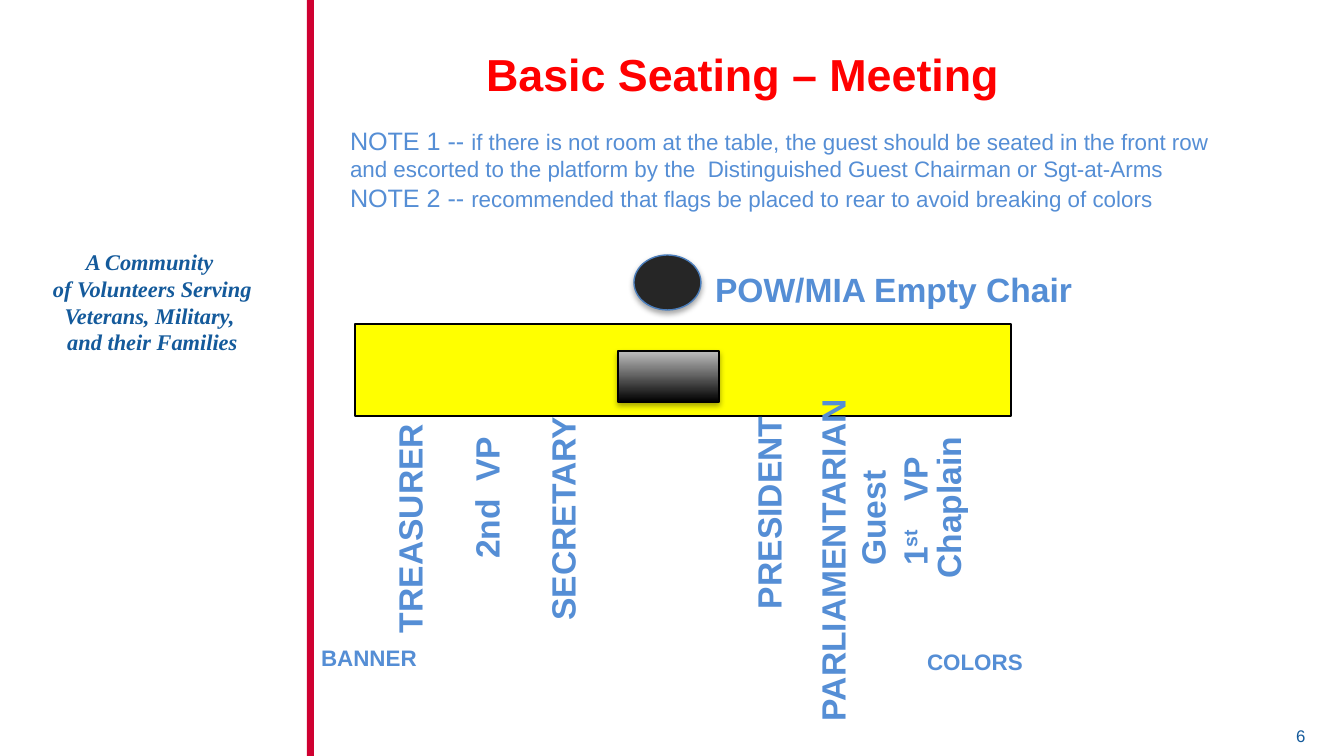
from dataclasses import dataclass
from lxml import etree
from pptx import Presentation
from pptx.dml.color import RGBColor as RGB
from pptx.enum.shapes import MSO_SHAPE as Shape
from pptx.enum.text import MSO_ANCHOR as Anchor, PP_ALIGN as Align
from pptx.oxml.ns import qn
from pptx.util import Pt

PX = 914400 / 134.4


def px(n):
    return round(n * PX)


@dataclass(frozen=True)
class Theme:
    sans: str = "Arial"
    serif: str = "Times New Roman"
    white: str = "FFFFFF"
    black: str = "000000"
    red: str = "FF0000"
    bar: str = "CF0031"
    navy: str = "145A9B"
    blue: str = "558ED5"
    yellow: str = "FFFF00"
    silver: str = "BDBDBD"
    coal: str = "262626"
    rim: str = "4B7EBC"
    head: float = 24
    label: float = 18
    lead: float = 13.5
    body: float = 12
    tiny: float = 9


class Deck:
    def __init__(self, theme):
        self.theme = theme
        self.prs = Presentation()
        self.prs.slide_width, self.prs.slide_height = px(1344), px(756)
        self.slide = self.prs.slides.add_slide(self.prs.slide_layouts[5])

    def font(self, par, size, color, bold=False, italic=False, face=None):
        font = par.font
        font.name = face or self.theme.sans
        font.size = Pt(size)
        font.bold, font.italic = bold, italic
        font.color.rgb = RGB.from_string(color)

    def frame(self, shape, wrap, top=7):
        frame = shape.text_frame
        frame.word_wrap = wrap
        frame.vertical_anchor = Anchor.TOP
        frame.margin_left = frame.margin_right = px(13)
        frame.margin_top, frame.margin_bottom = px(top), px(7)
        return frame

    def title(self, text, x, y, w, h):
        shape = self.slide.shapes.title
        shape.left, shape.top, shape.width, shape.height = map(px, (x, y, w, h))
        par = self.frame(shape, True, 12).paragraphs[0]
        par.text = text
        par.alignment = Align.LEFT
        self.font(par, self.theme.head, self.theme.red, True)

    def text(self, text, x, y, w, h, size, color, wrap=False, align=Align.LEFT, **style):
        box = self.slide.shapes.add_textbox(*map(px, (x, y, w, h)))
        par = self.frame(box, wrap).paragraphs[0]
        par.text = text
        par.alignment = align
        self.font(par, size, color, **style)
        return box

    def seat(self, parts, x, y, w, h=54, tab=None):
        theme = self.theme
        box = self.text("", x - w / 2, y - h / 2, w, h, theme.label, theme.blue, bold=True)
        box.rotation = 270
        par = box.text_frame.paragraphs[0]
        if tab:
            props = par._p.get_or_add_pPr()
            stops = etree.Element(qn("a:tabLst"))
            etree.SubElement(stops, qn("a:tab"), pos=str(px(tab)), algn="l")
            props.insert(0, stops)
        for part, raised in parts:
            run = par.add_run()
            run.text = part
            if raised:
                run.font._element.set("baseline", "30000")

    def notes(self, lines, x, y, w, h):
        theme = self.theme
        box = self.slide.shapes.add_textbox(*map(px, (x, y, w, h)))
        frame = self.frame(box, True)
        for i, (lead, rest) in enumerate(lines):
            par = frame.add_paragraph() if i else frame.paragraphs[0]
            if lead:
                run = par.add_run()
                run.text = lead
                run.font.size = Pt(theme.lead)
            par.add_run().text = rest
            self.font(par, theme.body, theme.blue)

    def shape(self, kind, x, y, w, h, fill, line=None, shade=False):
        shape = self.slide.shapes.add_shape(kind, *map(px, (x, y, w, h)))
        shape.shadow.inherit = False
        if isinstance(fill, tuple):
            shape.fill.gradient()
            shape.fill.gradient_angle = 90
            for stop, color in zip(shape.fill.gradient_stops, fill):
                stop.color.rgb = RGB.from_string(color)
        else:
            shape.fill.solid()
            shape.fill.fore_color.rgb = RGB.from_string(fill)
        if line:
            shape.line.color.rgb = RGB.from_string(line)
            shape.line.width = Pt(0.75)
        else:
            shape.line.fill.background()
        if shade:
            self.shade(shape)

    def shade(self, shape):
        effects = shape._element.spPr.find(qn("a:effectLst"))
        outer = etree.SubElement(
            effects, qn("a:outerShdw"), blurRad=str(Pt(3.1)),
            dist=str(Pt(1.8)), dir="5400000", rotWithShape="0")
        color = etree.SubElement(outer, qn("a:srgbClr"), val=self.theme.black)
        etree.SubElement(color, qn("a:alpha"), val="35000")


def main():
    t = Theme()
    deck = Deck(t)

    deck.shape(Shape.RECTANGLE, 0, 0, 306, 756, t.white)
    deck.shape(Shape.RECTANGLE, 307, 0, 7, 756, t.bar)
    deck.text("6", 1283, 719, 61, 35, t.tiny, t.navy)
    deck.text("A Community \vof Volunteers Serving Veterans, Military, \vand their Families",
              39, 241, 227, 122, t.body, t.navy, True, Align.CENTER,
              bold=True, italic=True, face=t.serif)
    deck.title("Basic Seating – Meeting", 473, 35, 591, 87)

    deck.shape(Shape.RECTANGLE, 355, 324, 656, 92, t.yellow, t.black)
    deck.shape(Shape.RECTANGLE, 618, 351, 101, 51, (t.black, t.silver), t.black, True)
    deck.shape(Shape.OVAL, 634, 255, 67, 55, t.coal, t.rim, True)

    for text, x, y, w, h, size in (
        ("BANNER", 308, 637, 124, 40, t.body),
        ("COLORS", 914, 641, 124, 40, t.body),
        ("POW/MIA Empty Chair", 702, 262, 388, 54, t.label),
    ):
        deck.text(text, x, y, w, h, size, t.blue, bold=True)

    for name, x, y, w in (
        ("TREASURER", 409, 527, 238),
        ("SECRETARY", 562, 517, 233),
        ("PRESIDENT", 768, 511, 222),
        ("PARLIAMENTARIAN", 832, 558, 352),
        ("Guest", 872, 517, 124),
    ):
        deck.seat([(name, False)], x, y, w)
    deck.seat([("Chaplain", False)], 968, 506, 171, 95)
    deck.seat([("2nd\tVP", False)], 486, 496, 152, tab=77)
    deck.seat([("1", False), ("st", True), ("\tVP", False)], 914, 509, 140, tab=64)

    deck.notes([
        ("NOTE 1 -- ", "if there is not room at the table, the guest should be seated in the front row"),
        ("", "and escorted to the platform by the  Distinguished Guest Chairman or Sgt-at-Arms"),
        ("NOTE 2 -- ", "recommended that flags be placed to rear to avoid breaking of colors"),
    ], 337, 118, 900, 132)

    deck.prs.save("out.pptx")


if __name__ == "__main__":
    main()
